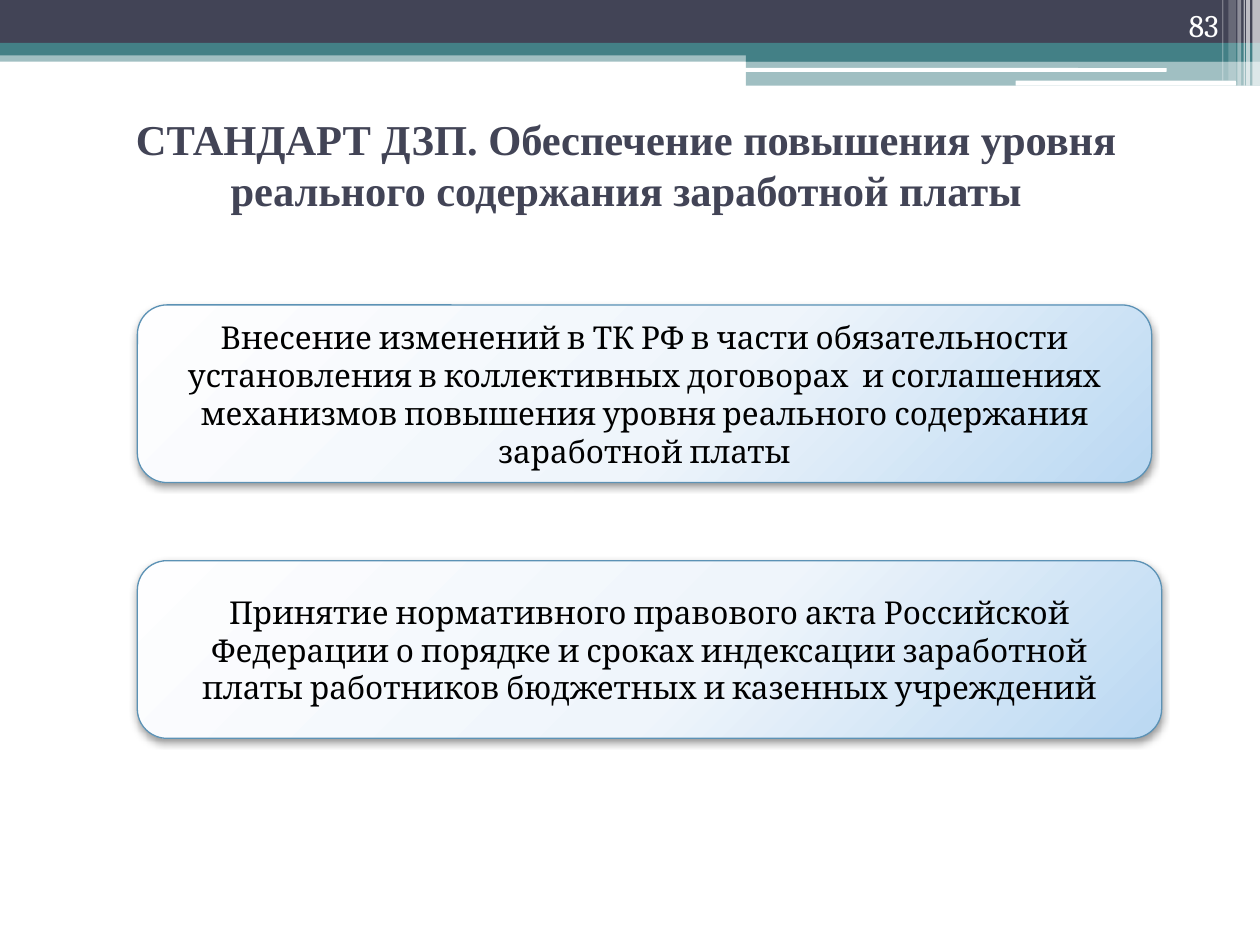
from lxml import etree
from pptx import Presentation
from pptx.dml.color import RGBColor
from pptx.enum.shapes import MSO_SHAPE as Shape
from pptx.enum.text import MSO_ANCHOR as Anchor, PP_ALIGN as Align
from pptx.oxml import parse_xml
from pptx.oxml.ns import nsdecls, qn
from pptx.util import Inches, Pt

NAVY = RGBColor(0x42, 0x44, 0x56)
TEAL = RGBColor(0x43, 0x80, 0x86)
WHITE = RGBColor(0xFF, 0xFF, 0xFF)
BLACK = RGBColor(0x00, 0x00, 0x00)
EDGE = RGBColor(0x5C, 0x92, 0xB5)
CARD_STOPS = (
    (0, RGBColor(0xFE, 0xFE, 0xFF)),
    (55, RGBColor(0xEF, 0xF5, 0xFB)),
    (100, RGBColor(0xBA, 0xD8, 0xF2)),
)


def add_block(slide, box, color, alpha=100, kind=Shape.RECTANGLE):
    s = slide.shapes.add_shape(kind, *map(Inches, box))
    s.shadow.inherit = False
    s.fill.solid()
    s.fill.fore_color.rgb = color
    s.line.fill.background()
    if alpha < 100:
        clr = s._element.spPr.find(qn("a:solidFill"))[0]
        etree.SubElement(clr, qn("a:alpha"), val=str(alpha * 1000))
    return s


def write(tf, text, font, size, color, align, anchor, bold=False):
    tf.word_wrap = True
    tf.vertical_anchor = anchor
    p = tf.paragraphs[0]
    p.alignment = align
    r = p.add_run()
    r.text = text
    r.font.name = font
    r.font.size = Pt(size)
    r.font.bold = bold
    r.font.color.rgb = color


def add_header(slide, box):
    x, y, w, h = box
    split = 5.92
    bands = (
        (0, 0.4, w, 0.09, TEAL, 50),
        (0, 0, w, 0.34, NAVY, 100),
        (0, 0.34, w, 0.1, TEAL, 100),
        (split, 0.39, w - split, 0.1, TEAL, 100),
        (split, 0.48, w - split, 0.2, TEAL, 50),
    )
    for dx, dy, bw, bh, color, alpha in bands:
        add_block(slide, (x + dx, y + dy, bw, bh), color, alpha)
    for dx, dy, bw, bh in ((5.91, 0.54, 3.35, 0.03), (8.06, 0.64, 1.75, 0.04)):
        add_block(slide, (x + dx, y + dy, bw, bh), WHITE,
                  kind=Shape.ROUNDED_RECTANGLE)
    stripes = (
        (9.94, 0.06, h, 65),
        (9.89, 0.03, h, 65),
        (9.87, 0.01, h, 60),
        (9.82, 0.03, h, 40),
        (9.75, 0.06, h - 0.04, 20),
        (9.7, 0.01, h - 0.04, 30),
    )
    for dx, sw, sh, alpha in stripes:
        add_block(slide, (x + dx, y, sw, sh), WHITE, alpha)


def add_title(slide, box, text):
    s = slide.shapes.title
    s.left, s.top, s.width, s.height = map(Inches, box)
    s.text_frame.margin_bottom = Inches(0.18)
    write(s.text_frame, text, "Times New Roman", 24.3, NAVY,
          Align.CENTER, Anchor.MIDDLE, bold=True)


def add_card(slide, box, text):
    s = add_block(slide, box, WHITE, kind=Shape.ROUNDED_RECTANGLE)
    s.line.color.rgb = EDGE
    s.line.width = Pt(0.75)
    stops = "".join(
        f'<a:gs pos="{pos * 1000}"><a:srgbClr val="{color}"/></a:gs>'
        for pos, color in CARD_STOPS)
    sp_pr = s._element.spPr
    sp_pr.replace(sp_pr.find(qn("a:solidFill")), parse_xml(
        f'<a:gradFill {nsdecls("a")} rotWithShape="1"><a:gsLst>{stops}</a:gsLst>'
        '<a:path path="circle"><a:fillToRect l="-40000" t="-90000" '
        'r="140000" b="190000"/></a:path></a:gradFill>'))
    sp_pr.find(qn("a:effectLst")).append(parse_xml(
        f'<a:outerShdw {nsdecls("a")} blurRad="{Pt(4.1)}" dist="{Pt(2)}" '
        'dir="5400000" rotWithShape="0"><a:srgbClr val="000000">'
        '<a:alpha val="40000"/></a:srgbClr></a:outerShdw>'))
    write(s.text_frame, text, "Cambria", 18, BLACK, Align.CENTER, Anchor.MIDDLE)


def add_page_number(slide, box, number):
    s = slide.shapes.add_textbox(*map(Inches, box))
    write(s.text_frame, number, "Cambria", 18, WHITE, Align.RIGHT, Anchor.BOTTOM)


def main():
    prs = Presentation()
    prs.slide_width, prs.slide_height = Inches(10), Inches(7.5)
    slide = prs.slides.add_slide(prs.slide_layouts[5])
    add_header(slide, (0, 0, 10, 0.68))
    add_title(slide, (0.47, 0.78, 9, 1.17),
              "СТАНДАРТ ДЗП. Обеспечение повышения уровня "
              "реального содержания заработной платы")
    add_card(slide, (1.09, 2.42, 8.05, 1.41),
             "Внесение изменений в ТК РФ в части обязательности установления "
             "в коллективных договорах  и соглашениях механизмов повышения "
             "уровня реального содержания заработной платы")
    add_card(slide, (1.09, 4.45, 8.13, 1.41),
             "Принятие нормативного правового акта Российской Федерации "
             "о порядке и сроках индексации заработной платы работников "
             "бюджетных и казенных учреждений")
    add_page_number(slide, (8.94, 0, 0.83, 0.4), "83")
    prs.save("out.pptx")


if __name__ == "__main__":
    main()
